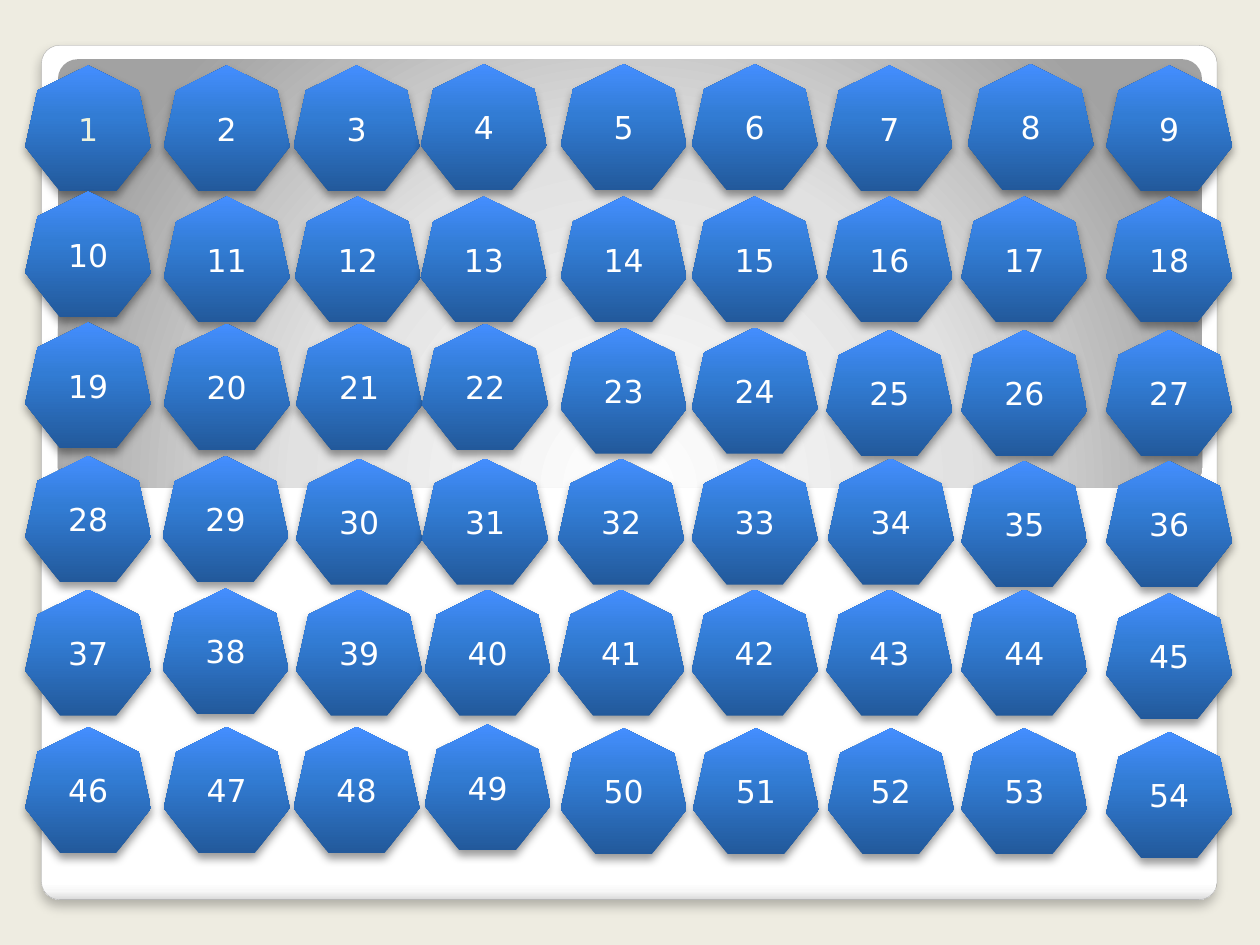
from pptx import Presentation
from pptx.dml.color import RGBColor
from pptx.enum.shapes import MSO_SHAPE as Shape
from pptx.enum.text import MSO_ANCHOR as Anchor, PP_ALIGN as Align
from pptx.oxml import parse_xml
from pptx.oxml.ns import nsdecls
from pptx.util import Inches, Pt

FONT = "DejaVu Sans"
TILE_SIZE = 1
TILE_STOPS = [(0, "22599B"), (60, "327CD4"), (100, "448EFF")]
CARD_STOPS = [(0, "FFFFFF"), (98, "FFFFFF"), (99, "F7F7F7"), (100, "DADADA")]
PANEL_STOPS = [(0, "FFFFFF"), (55, "E1E1E1"), (100, "A2A2A2")]

# Hand-placed tiles: left and top edges inside the board, row by row
TILE_LEFTS = [
    [0, 1.1, 2.13, 3.14, 4.25, 5.29, 6.36, 7.48, 8.58],
    [0, 1.1, 2.14, 3.14, 4.25, 5.29, 6.36, 7.43, 8.58],
    [0, 1.1, 2.15, 3.15, 4.25, 5.29, 6.36, 7.43, 8.58],
    [0, 1.09, 2.15, 3.15, 4.23, 5.29, 6.37, 7.43, 8.58],
    [0, 1.09, 2.15, 3.17, 4.23, 5.29, 6.36, 7.43, 8.58],
    [0, 1.1, 2.13, 3.17, 4.25, 5.3, 6.37, 7.43, 8.58],
]
TILE_TOPS = [
    [0.01, 0.01, 0.01, 0, 0, 0, 0.01, 0, 0.01],
    [1.01] + [1.05] * 8,
    [2.05, 2.06, 2.06, 2.06, 2.09, 2.09, 2.11, 2.11, 2.11],
    [3.11, 3.11, 3.13, 3.13, 3.13, 3.13, 3.13, 3.15, 3.15],
    [4.17, 4.16] + [4.17] * 6 + [4.2],
    [5.26, 5.26, 5.26, 5.24, 5.27, 5.27, 5.27, 5.27, 5.3],
]


def color(hex_value):
    return RGBColor.from_string(hex_value)


def add_filled_shape(slide, kind, box, stops, direction):
    """Add a shape without outline or shadow, filled with a gradient."""
    shape = slide.shapes.add_shape(kind, *(Inches(length) for length in box))
    stop_xml = "".join(
        f'<a:gs pos="{position * 1000}"><a:srgbClr val="{value}"/></a:gs>'
        for position, value in stops)
    shape._element.spPr.append(parse_xml(
        f'<a:gradFill {nsdecls("a")} rotWithShape="1">'
        f"<a:gsLst>{stop_xml}</a:gsLst>{direction}</a:gradFill>"))
    shape.line.fill.background()
    shape.shadow.inherit = False
    return shape


def linear(degrees):
    return f'<a:lin ang="{degrees * 60000}" scaled="0"/>'


def add_shadow(shape, opacity, blur, distance):
    """Give the shape a black shadow that falls straight down."""
    shape._element.spPr.effectLst.append(parse_xml(
        f'<a:outerShdw {nsdecls("a")} blurRad="{Pt(blur)}" dist="{Pt(distance)}"'
        f' dir="5400000" rotWithShape="0"><a:srgbClr val="000000">'
        f'<a:alpha val="{opacity * 1000}"/></a:srgbClr></a:outerShdw>'))


def add_backdrop(slide, left, top, width, height):
    # White card
    card = add_filled_shape(slide, Shape.ROUNDED_RECTANGLE,
                            (left, top, width, height), CARD_STOPS, linear(90))
    card.adjustments[0] = 0.021
    card.line.color.rgb = color("A4A4A4")
    card.line.width = Pt(0.16)
    add_shadow(card, 25, 6, 4)

    # Grey panel across the upper half, lit from below
    glow = ('<a:path path="circle"><a:fillToRect l="50000" t="175000"'
            ' r="50000" b="-75000"/></a:path>')
    panel = add_filled_shape(slide, Shape.ROUNDED_RECTANGLE,
                             (left + 0.13, top + 0.11, width - 0.25, 3.4),
                             PANEL_STOPS, glow)
    panel.adjustments[0] = 0.046


def add_tile(slide, left, top, number, text_color):
    tile = add_filled_shape(slide, Shape.HEPTAGON,
                            (left, top, TILE_SIZE, TILE_SIZE),
                            TILE_STOPS, linear(270))
    add_shadow(tile, 40, 5.2, 3)
    text_frame = tile.text_frame
    text_frame.text = str(number)
    text_frame.vertical_anchor = Anchor.MIDDLE
    paragraph = text_frame.paragraphs[0]
    paragraph.alignment = Align.CENTER
    font = paragraph.runs[0].font
    font.name = FONT
    font.size = Pt(18)
    font.color.rgb = color(text_color)


def add_number_board(slide, left, top):
    number = 1
    for row_lefts, row_tops in zip(TILE_LEFTS, TILE_TOPS):
        for tile_left, tile_top in zip(row_lefts, row_tops):
            text_color = "EBF1DE" if number == 1 else "FFFFFF"
            add_tile(slide, left + tile_left, top + tile_top, number, text_color)
            number += 1


def main():
    presentation = Presentation()
    presentation.slide_width = Inches(10)
    presentation.slide_height = Inches(7.5)
    slide = presentation.slides.add_slide(presentation.slide_layouts[6])
    slide.background.fill.solid()
    slide.background.fill.fore_color.rgb = color("EEECE1")
    add_backdrop(slide, 0.33, 0.36, 9.33, 6.78)
    add_number_board(slide, 0.2, 0.51)
    presentation.save("out.pptx")


if __name__ == "__main__":
    main()
